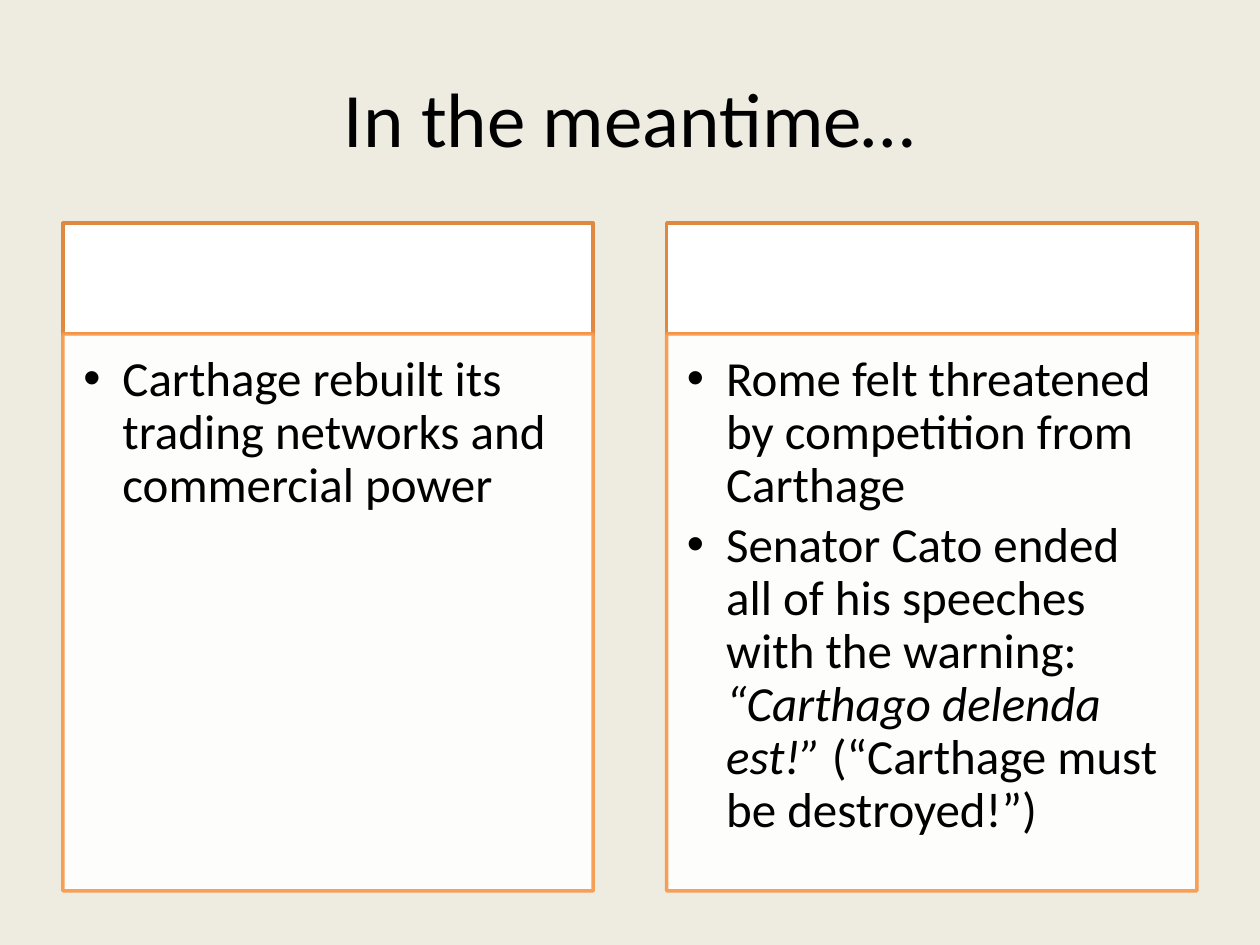
from lxml import etree
from pptx import Presentation
from pptx.dml.color import RGBColor
from pptx.enum.shapes import MSO_SHAPE
from pptx.enum.text import MSO_ANCHOR, PP_ALIGN
from pptx.oxml.ns import qn
from pptx.util import Cm, Pt

RECT = MSO_SHAPE.RECTANGLE
TOP, MIDDLE = MSO_ANCHOR.TOP, MSO_ANCHOR.MIDDLE
LEFT, CENTER = PP_ALIGN.LEFT, PP_ALIGN.CENTER

BLACK = RGBColor(0x00, 0x00, 0x00)
WHITE = RGBColor(0xFF, 0xFF, 0xFF)
CREAM = RGBColor(0xEE, 0xEC, 0xE1)
RUST = RGBColor(0xE0, 0x88, 0x40)
ORANGE = RGBColor(0xF7, 0x96, 0x46)

FONT = "Calibri"
MARGIN = 1.27
WIDTH = 10.69
PITCH = 12.17
HEAD_TOP, HEAD_HIGH = 4.5, 2.23
BODY_HIGH = 11.23

# Each column is a list of points; each point is a list of (text, italic) runs.
COLUMNS = [
    [[("Carthage rebuilt its trading networks and commercial power", False)]],
    [
        [("Rome felt threatened by competition from Carthage", False)],
        [
            ("Senator Cato ended all of his speeches with the warning: ", False),
            ("“Carthago delenda est!”", True),
            (" (“Carthage must be destroyed!”)", False),
        ],
    ],
]


def add_bullet(para, indent):
    props = para._p.get_or_add_pPr()
    props.set("marL", str(Cm(indent)))
    props.set("indent", str(-Cm(indent)))
    font = etree.SubElement(props, qn("a:buFont"))
    font.set("typeface", "Arial")
    etree.SubElement(props, qn("a:buChar")).set("char", "•")


def set_alpha(part, percent):
    """Make the solid colour inside a fill or line element see-through."""
    for color in part.iter(qn("a:srgbClr")):
        etree.SubElement(color, qn("a:alpha")).set("val", str(percent * 1000))


def write(shape, points, size, align=LEFT, anchor=TOP, insets=None,
          bullet=None, spacing=None, after=None):
    """Fill a shape with paragraphs of (text, italic) runs."""
    frame = shape.text_frame
    frame.word_wrap = True
    frame.vertical_anchor = anchor
    if insets:
        (frame.margin_left, frame.margin_top,
         frame.margin_right, frame.margin_bottom) = map(Cm, insets)
    for i, runs in enumerate(points):
        para = frame.add_paragraph() if i else frame.paragraphs[0]
        if bullet:
            add_bullet(para, bullet)
        para.alignment = align
        if spacing:
            para.line_spacing = spacing
        if after:
            para.space_after = Pt(after)
        for text, italic in runs:
            run = para.add_run()
            run.text = text
            run.font.name = FONT
            run.font.size = Pt(size)
            run.font.italic = italic
            run.font.color.rgb = BLACK


def add_panel(slide, left, top, high, edge, alpha=None):
    panel = slide.shapes.add_shape(RECT, Cm(left), Cm(top), Cm(WIDTH), Cm(high))
    panel.shadow.inherit = False
    panel.fill.solid()
    panel.fill.fore_color.rgb = WHITE
    panel.line.color.rgb = edge
    panel.line.width = Pt(2)
    if alpha:
        set_alpha(panel._element.spPr, alpha)
    return panel


def add_title(slide, text):
    box = slide.shapes.add_textbox(Cm(MARGIN), Cm(0.76), Cm(22.86), Cm(3.18))
    write(box, [[(text, False)]], 44, align=CENTER, anchor=MIDDLE)


def add_column(slide, left, points):
    add_panel(slide, left, HEAD_TOP, HEAD_HIGH, RUST)
    body = add_panel(slide, left, HEAD_TOP + HEAD_HIGH, BODY_HIGH, ORANGE, alpha=90)
    write(body, points, 28, insets=(0.41, 0.41, 0.56, 0.61),
          bullet=0.79, spacing=0.9, after=4.2)


def main():
    deck = Presentation()
    deck.slide_width, deck.slide_height = Cm(25.4), Cm(19.05)
    slide = deck.slides.add_slide(deck.slide_layouts[6])
    slide.background.fill.solid()
    slide.background.fill.fore_color.rgb = CREAM
    add_title(slide, "In the meantime…")
    for i, points in enumerate(COLUMNS):
        add_column(slide, MARGIN + i * PITCH, points)
    deck.save("out.pptx")


if __name__ == "__main__":
    main()
